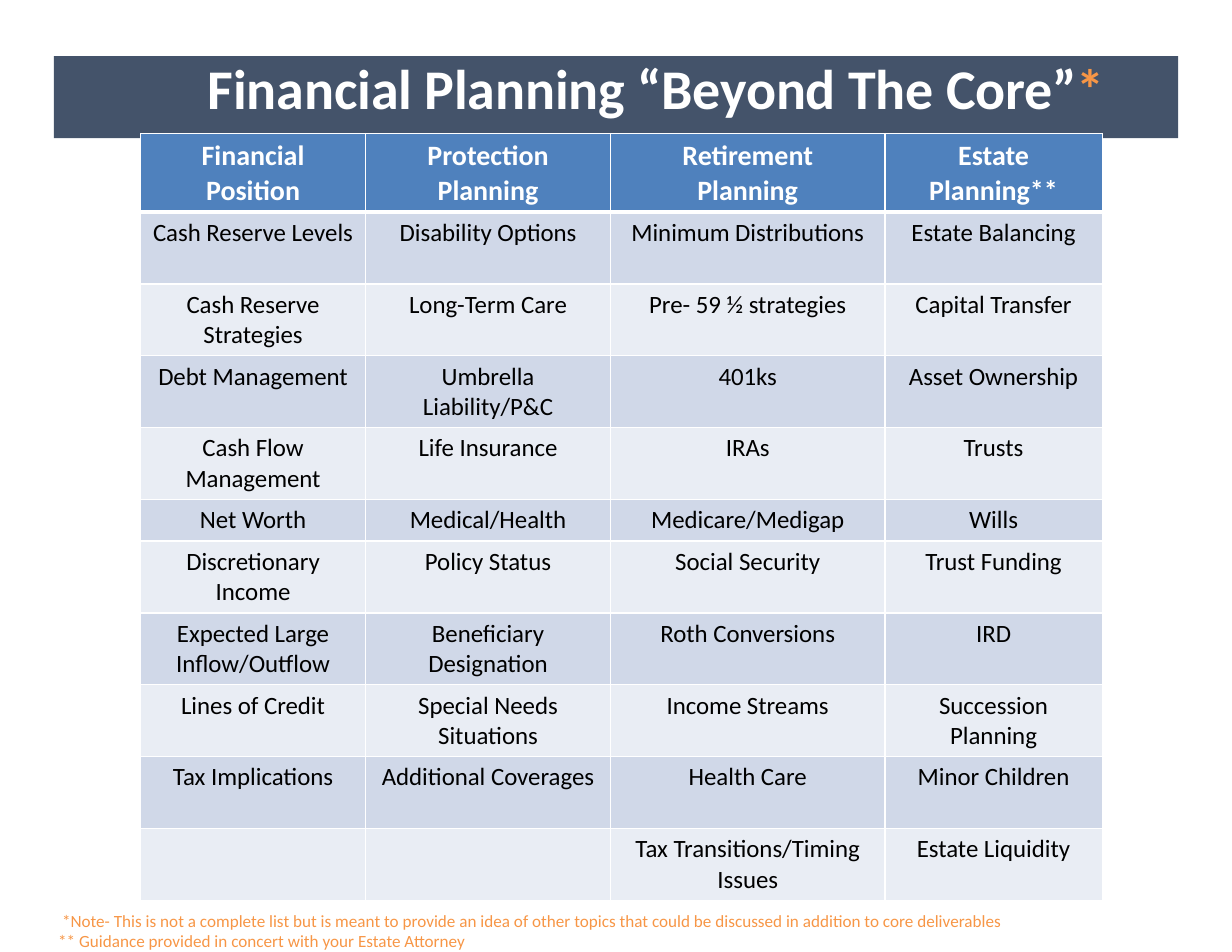
from lxml import etree
from pptx import Presentation
from pptx.dml.color import RGBColor
from pptx.enum.text import MSO_AUTO_SIZE, MSO_VERTICAL_ANCHOR, PP_ALIGN
from pptx.oxml.ns import qn
from pptx.util import Cm, Pt

CENTER, LEFT = PP_ALIGN.CENTER, PP_ALIGN.LEFT
TOP = MSO_VERTICAL_ANCHOR.TOP
GROW = MSO_AUTO_SIZE.SHAPE_TO_FIT_TEXT
TITLE_ONLY = 5

COLORS = {
    "banner": "44536A",
    "header": "4F81BD",
    "odd": "D0D8E8",
    "even": "E9EDF4",
    "white": "FFFFFF",
    "text": "000000",
    "accent": "F79646",
}

# Table content; a line break starts a new paragraph
ROWS = [
    ["Financial Position", "Protection Planning", "Retirement\nPlanning", "Estate Planning**"],
    ["Cash Reserve Levels", "Disability Options", "Minimum Distributions", "Estate Balancing"],
    ["Cash Reserve Strategies", "Long-Term Care", "Pre- 59 ½ strategies", "Capital Transfer"],
    ["Debt Management", "Umbrella Liability/P&C", "401ks", "Asset Ownership"],
    ["Cash Flow Management", "Life Insurance", "IRAs", "Trusts"],
    ["Net Worth", "Medical/Health", "Medicare/Medigap", "Wills"],
    ["Discretionary Income", "Policy Status", "Social Security", "Trust Funding"],
    ["Expected Large Inflow/Outflow", "Beneficiary Designation", "Roth Conversions", "IRD"],
    ["Lines of Credit", "Special Needs\nSituations", "Income Streams", "Succession Planning"],
    ["Tax Implications", "Additional Coverages", "Health Care", "Minor Children"],
    ["", "", "Tax Transitions/Timing Issues", "Estate Liquidity"],
]
COL_WIDTHS = [5.1, 5.56, 6.22, 4.93]
HEADER_HEIGHT, ROW_HEIGHT, SHORT_HEIGHT = 1.73, 1.63, 0.94
SHORT_ROW = 5

NOTES = [
    " *Note- This is not a complete list but is meant to provide an idea of other topics "
    "that could be discussed in addition to core deliverables",
    "** Guidance provided in concert with your Estate Attorney",
]


class SlideBuilder:
    font = "Calibri"

    def __init__(self, slide):
        self.slide = slide

    def color(self, name):
        return RGBColor.from_string(COLORS[name])

    def fill(self, target, name):
        target.fill.solid()
        target.fill.fore_color.rgb = self.color(name)

    def run(self, p, text, size, color, bold=False):
        r = p.add_run()
        r.text = text
        r.font.name = self.font
        r.font.size = Pt(size)
        r.font.bold = bold
        r.font.color.rgb = self.color(color)
        return r

    def paragraphs(self, tf, lines, size, color, bold=False, align=LEFT):
        for i, line in enumerate(lines):
            p = tf.add_paragraph() if i else tf.paragraphs[0]
            p.alignment = align
            if line:
                self.run(p, line, size, color, bold)

    def title(self, parts, left, top, width, height):
        s = self.slide.shapes.title
        s.left, s.top, s.width, s.height = map(Cm, (left, top, width, height))
        self.fill(s, "banner")
        tf = s.text_frame
        tf.margin_left = tf.margin_top = tf.margin_right = tf.margin_bottom = 0
        tf.vertical_anchor = TOP
        tf.word_wrap = True
        tf.auto_size = GROW
        p = tf.paragraphs[0]
        p.alignment = CENTER
        p.line_spacing = Pt(41.5)
        pPr = p._p.get_or_add_pPr()
        pPr.set("marL", str(Cm(1.83)))
        pPr.set("indent", "0")
        for text, color in parts:
            r = self.run(p, text, 36, color, True)
            r._r.get_or_add_rPr().set("spc", "-10")

    def border(self, cell, side, width):
        tcPr = cell._tc.get_or_add_tcPr()
        ln = etree.SubElement(tcPr, qn("a:" + side), w=str(Pt(width)))
        solid = etree.SubElement(ln, qn("a:solidFill"))
        etree.SubElement(solid, qn("a:srgbClr"), val=COLORS["white"])

    def cell(self, cell, text, row):
        header = row == 0
        # Borders come before the fill in the cell properties
        for side in ("lnL", "lnR", "lnT", "lnB"):
            thick = (header and side == "lnB") or (row == 1 and side == "lnT")
            self.border(cell, side, 3 if thick else 1)
        self.fill(cell, "header" if header else "odd" if row % 2 else "even")
        self.paragraphs(cell.text_frame, text.split("\n"), 18 if header else 16,
                        "white" if header else "text", header, CENTER)

    def table(self, rows, widths, heights, left, top):
        frame = self.slide.shapes.add_table(
            len(rows), len(widths), Cm(left), Cm(top), Cm(sum(widths)), Cm(sum(heights)))
        table = frame.table
        for col, width in zip(table.columns, widths):
            col.width = Cm(width)
        for i, (row, height) in enumerate(zip(rows, heights)):
            table.rows[i].height = Cm(height)
            for j, text in enumerate(row):
                self.cell(table.cell(i, j), text, i)

    def notes(self, lines, left, top, width, height):
        s = self.slide.shapes.add_textbox(Cm(left), Cm(top), Cm(width), Cm(height))
        tf = s.text_frame
        tf.word_wrap = True
        tf.auto_size = GROW
        tf.margin_top = Cm(0.6)
        self.paragraphs(tf, lines, 11, "accent")


def main():
    prs = Presentation()
    prs.slide_width, prs.slide_height = Cm(27.94), Cm(21.59)
    s = SlideBuilder(prs.slides.add_slide(prs.slide_layouts[TITLE_ONLY]))

    # Title banner
    s.title([("Financial Planning “Beyond The Core”", "white"), ("*", "accent")],
            1.22, 1.27, 25.5, 1.5)

    # Footnotes
    s.notes(NOTES, 1.07, 20.04, 25.5, 1.68)

    # Planning topics
    heights = [HEADER_HEIGHT] + [ROW_HEIGHT] * (len(ROWS) - 1)
    heights[SHORT_ROW] = SHORT_HEIGHT
    s.table(ROWS, COL_WIDTHS, heights, 3.19, 3.03)

    prs.save("out.pptx")


if __name__ == "__main__":
    main()
